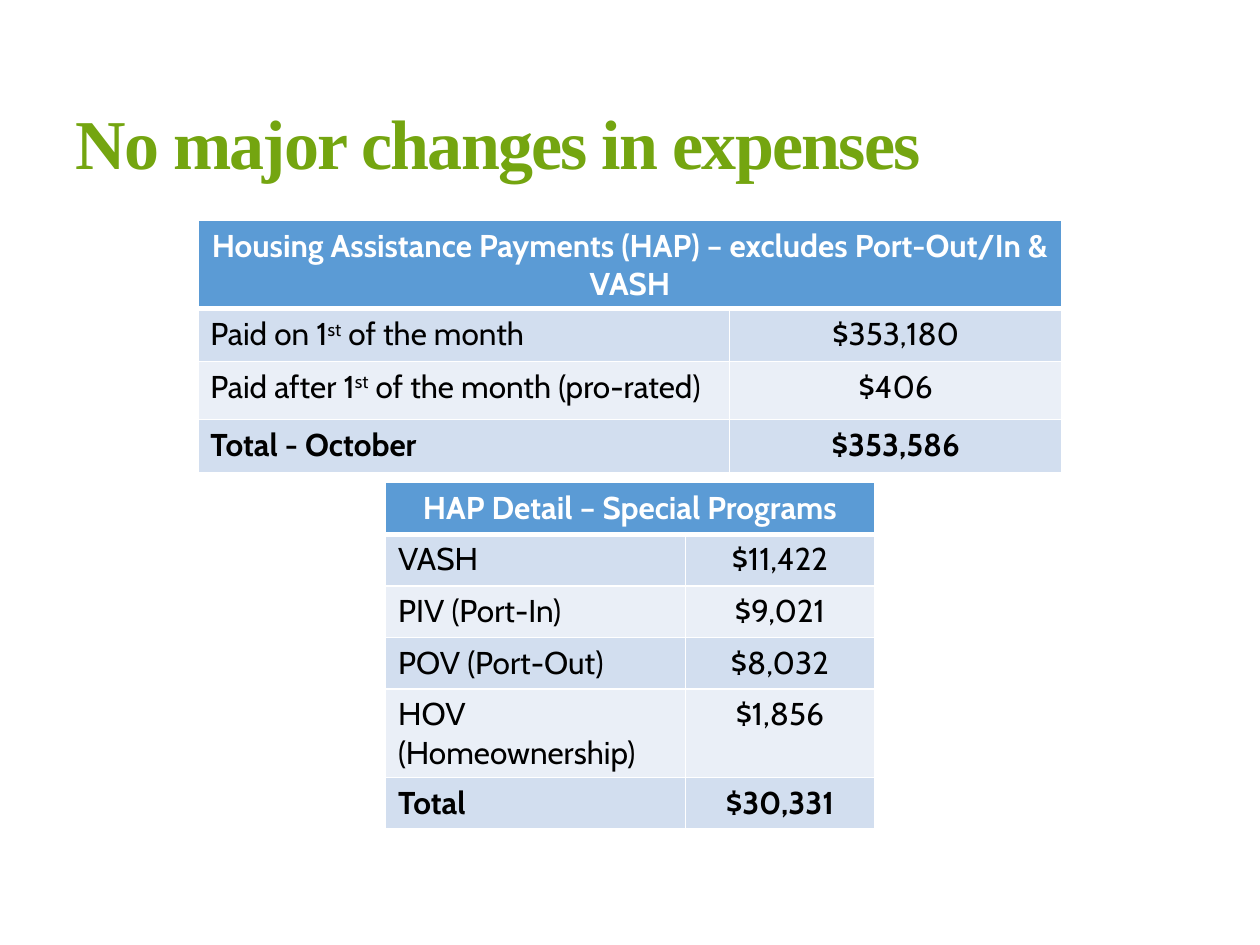
"""Build the housing assistance expenses slide with its two payment tables."""
from dataclasses import dataclass

from lxml.etree import fromstring
from pptx import Presentation
from pptx.dml.color import RGBColor
from pptx.enum.text import MSO_ANCHOR as Anchor, PP_ALIGN as Align
from pptx.oxml.ns import nsdecls
from pptx.slide import Slide
from pptx.table import _Cell as Cell
from pptx.text.text import _Paragraph as Paragraph
from pptx.util import Inches, Pt

HEADER_FILL = "5B9BD5"
BAND_FILLS = ("D2DEEF", "EAEFF7")
WHITE, BLACK, GREEN = "FFFFFF", "000000", "74A510"
TITLE_FORMAT = {"name": "Times New Roman", "size": Pt(40), "bold": True}
TABLE_FORMAT = {"name": "Cabin", "size": Pt(18)}


@dataclass(frozen=True)
class PaymentTable:
    left: float
    top: float
    column_widths: tuple[float, ...]
    row_heights: tuple[float, ...]
    heading: str
    rows: tuple[tuple[str, str], ...]


PAYMENT_TABLES = (
    PaymentTable(
        1.57, 1.75, (4.22, 2.64), (0.42, 0.42, 0.46, 0.42),
        "Housing Assistance Payments (HAP) – excludes Port-Out/In & VASH",
        (
            ("Paid on 1^st^ of the month", "$353,180"),
            ("Paid after 1^st^ of the month (pro-rated)", "$406"),
            ("Total - October", "$353,586"),
        ),
    ),
    PaymentTable(
        3.06, 3.83, (2.38, 1.5), (0.41,) * 6,
        "HAP Detail – Special Programs",
        (
            ("VASH", "$11,422"),
            ("PIV (Port-In)", "$9,021"),
            ("POV (Port-Out)", "$8,032"),
            ("HOV (Homeownership)", "$1,856"),
            ("Total", "$30,331"),
        ),
    ),
)


def color(value: str) -> RGBColor:
    return RGBColor.from_string(value)


def write_text(paragraph: Paragraph, text: str, font_color: str, formats: dict) -> None:
    """Add runs to a paragraph, raising the parts between carets."""
    for index, part in enumerate(text.split("^")):
        run = paragraph.add_run()
        run.text = part
        for name, value in formats.items():
            setattr(run.font, name, value)
        run.font.color.rgb = color(font_color)
        if index % 2:
            run.font._element.set("baseline", "30000")


def set_borders(cell: Cell, top: float, bottom: float) -> None:
    properties = cell._tc.get_or_add_tcPr()
    widths = {"lnL": 1, "lnR": 1, "lnT": top, "lnB": bottom}
    for index, (side, width) in enumerate(widths.items()):
        properties.insert(index, fromstring(
            f'<a:{side} {nsdecls("a")} w="{Pt(width)}"><a:solidFill>'
            f'<a:srgbClr val="{WHITE}"/></a:solidFill></a:{side}>'
        ))


def add_title(slide: Slide, text: str) -> None:
    box = slide.shapes.add_textbox(Inches(0.5), Inches(0.58), Inches(9), Inches(1.08))
    frame = box.text_frame
    frame.word_wrap = True
    frame.vertical_anchor = Anchor.MIDDLE
    paragraph = frame.paragraphs[0]
    write_text(paragraph, text, GREEN, TITLE_FORMAT)
    paragraph.runs[0].font._element.set("spc", "-100")


def add_payment_table(slide: Slide, payment: PaymentTable) -> None:
    table = slide.shapes.add_table(
        len(payment.row_heights), len(payment.column_widths),
        Inches(payment.left), Inches(payment.top),
        Inches(sum(payment.column_widths)), Inches(sum(payment.row_heights)),
    ).table
    for column, width in zip(table.columns, payment.column_widths):
        column.width = Inches(width)
    for row, height in zip(table.rows, payment.row_heights):
        row.height = Inches(height)
    table.cell(0, 0).merge(table.cell(0, 1))

    last_row = len(payment.rows)
    for row_index, texts in enumerate(((payment.heading, ""), *payment.rows)):
        is_header = row_index == 0
        fill = HEADER_FILL if is_header else BAND_FILLS[(row_index - 1) % 2]
        formats = TABLE_FORMAT | {"bold": row_index in (0, last_row)}
        for column_index, text in enumerate(texts):
            cell = table.cell(row_index, column_index)
            cell.fill.solid()
            cell.fill.fore_color.rgb = color(fill)
            set_borders(cell, 3 if row_index == 1 else 1, 3 if is_header else 1)
            if text:
                paragraph = cell.text_frame.paragraphs[0]
                centered = is_header or column_index == 1
                paragraph.alignment = Align.CENTER if centered else Align.LEFT
                write_text(paragraph, text, WHITE if is_header else BLACK, formats)


def main() -> None:
    presentation = Presentation()
    presentation.slide_width = Inches(10)
    presentation.slide_height = Inches(7.5)
    slide = presentation.slides.add_slide(presentation.slide_layouts[6])
    add_title(slide, "No major changes in expenses")
    for payment in PAYMENT_TABLES:
        add_payment_table(slide, payment)
    presentation.save("out.pptx")


if __name__ == "__main__":
    main()
